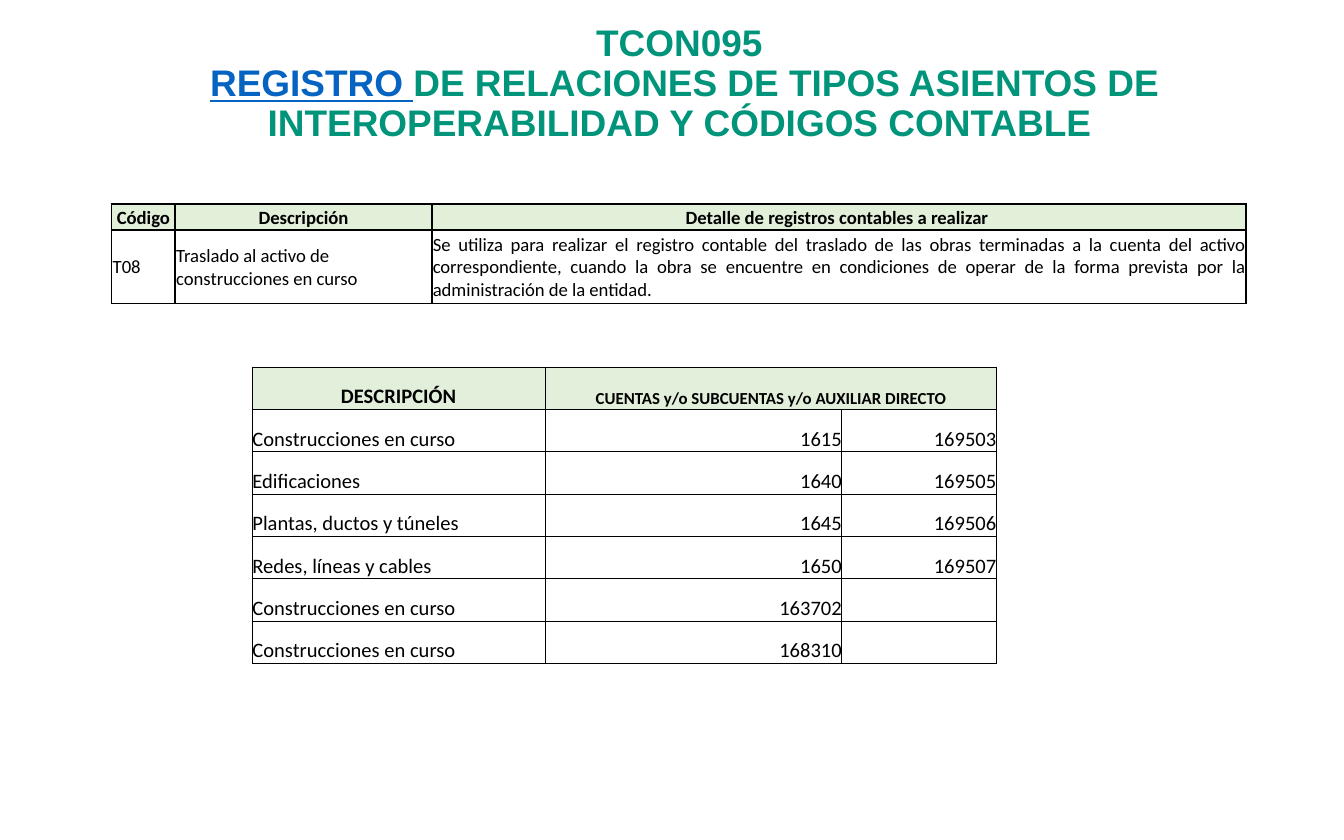
"""Builds a slide with a title, a table of entry types and a table of account codes."""
import dataclasses

import lxml.etree
import pptx
import pptx.dml.color
import pptx.enum.text
import pptx.oxml.ns
import pptx.util

Cm = pptx.util.Cm
Pt = pptx.util.Pt
RGB = pptx.dml.color.RGBColor.from_string
ALIGN = pptx.enum.text.PP_ALIGN
ANCHOR = pptx.enum.text.MSO_ANCHOR


@dataclasses.dataclass(frozen=True)
class Theme:
    title: str = "00947A"
    link: str = "0563C1"
    ink: str = "000000"
    type_head: str = "E2EFD9"
    account_head: str = "E2EFDA"
    title_font: str = "Arial"
    table_font: str = "Calibri"
    title_size: float = 19.8
    type_size: float = 10
    account_size: float = 11
    small_size: float = 9


THEME = Theme()


def style_cell(cell, text, size, align, anchor, fill, border, inset):
    cell.text = text
    cell.vertical_anchor = anchor
    cell.margin_left = cell.margin_right = cell.margin_top = Cm(inset)
    cell.margin_bottom = 0
    para = cell.text_frame.paragraphs[0]
    para.alignment = align
    para.font.name = THEME.table_font
    para.font.size = Pt(size)
    para.font.bold = fill is not None
    para.font.color.rgb = RGB(THEME.ink)
    properties = cell._tc.get_or_add_tcPr()
    for side in ("lnL", "lnR", "lnT", "lnB"):
        line = lxml.etree.SubElement(properties, pptx.oxml.ns.qn(f"a:{side}"), w=str(Pt(border)))
        paint = lxml.etree.SubElement(line, pptx.oxml.ns.qn("a:solidFill"))
        lxml.etree.SubElement(paint, pptx.oxml.ns.qn("a:srgbClr"), val=THEME.ink)
    if fill:
        cell.fill.solid()
        cell.fill.fore_color.rgb = RGB(fill)
    else:
        cell.fill.background()


def add_grid(page, left, top, widths, heights):
    frame = page.shapes.add_table(
        len(heights), len(widths), Cm(left), Cm(top), Cm(sum(widths)), Cm(sum(heights))
    )
    table = frame.table
    table.first_row = table.horz_banding = False
    for column, width in zip(table.columns, widths):
        column.width = Cm(width)
    for row, height in zip(table.rows, heights):
        row.height = Cm(height)
    return table


deck = pptx.Presentation()
deck.slide_width, deck.slide_height = Cm(25.4), Cm(15.88)
page = deck.slides.add_slide(deck.slide_layouts[6])

box = page.shapes.add_textbox(Cm(0.28), Cm(0.66), Cm(25.12), Cm(2.72))
frame = box.text_frame
frame.word_wrap = True
frame.vertical_anchor = ANCHOR.MIDDLE
frame.margin_top, frame.margin_bottom = 0, Cm(0.84)
para = frame.paragraphs[0]
para.alignment = ALIGN.CENTER
para.line_spacing = 0.9
para.font.name = THEME.title_font
para.font.size = Pt(THEME.title_size)
para.font.bold = True
para.add_run().text = "TCON095"
para.add_line_break()
for text, color, underline in (
    (" ", THEME.title, False),
    ("REGISTRO ", THEME.link, True),
    ("DE RELACIONES DE TIPOS ASIENTOS DE INTEROPERABILIDAD Y CÓDIGOS CONTABLE", THEME.title, False),
):
    span = para.add_run()
    span.text = text
    span.font.underline = underline
    span.font.color.rgb = RGB(color)
para.runs[0].font.color.rgb = RGB(THEME.title)

entry_types = (
    ("Código", "Descripción", "Detalle de registros contables a realizar "),
    (
        "T08",
        "Traslado al activo de construcciones en curso",
        "Se utiliza para realizar el registro contable del traslado de las obras terminadas "
        "a la cuenta del activo correspondiente, cuando la obra se encuentre en condiciones "
        "de operar de la forma prevista por la administración de la entidad.",
    ),
)
type_aligns = (ALIGN.LEFT, ALIGN.LEFT, ALIGN.JUSTIFY)
type_table = add_grid(page, 2.11, 3.86, (1.2, 4.85, 15.39), (0.49, 1.39))
for r, texts in enumerate(entry_types):
    for c, text in enumerate(texts):
        align = type_aligns[c] if r else ALIGN.CENTER
        fill = None if r else THEME.type_head
        style_cell(type_table.cell(r, c), text, THEME.type_size, align, ANCHOR.MIDDLE, fill, 1, 0.02)

accounts = (
    ("DESCRIPCIÓN", "CUENTAS y/o SUBCUENTAS y/o AUXILIAR DIRECTO", ""),
    ("Construcciones en curso", "1615", "169503"),
    ("Edificaciones", "1640", "169505"),
    ("Plantas, ductos y túneles", "1645", "169506"),
    ("Redes, líneas y cables", "1650", "169507"),
    ("Construcciones en curso", "163702", ""),
    ("Construcciones en curso", "168310", ""),
)
account_aligns = (ALIGN.LEFT, ALIGN.RIGHT, ALIGN.RIGHT)
account_table = add_grid(page, 4.77, 6.94, (5.53, 5.61, 2.92), [0.8] * len(accounts))
account_table.cell(0, 1).merge(account_table.cell(0, 2))
for r, texts in enumerate(accounts):
    for c, text in enumerate(texts):
        align = account_aligns[c] if r else ALIGN.CENTER
        fill = None if r else THEME.account_head
        size = THEME.small_size if r == 0 and c else THEME.account_size
        style_cell(account_table.cell(r, c), text, size, align, ANCHOR.BOTTOM, fill, 0.5, 0)

deck.save("out.pptx")
